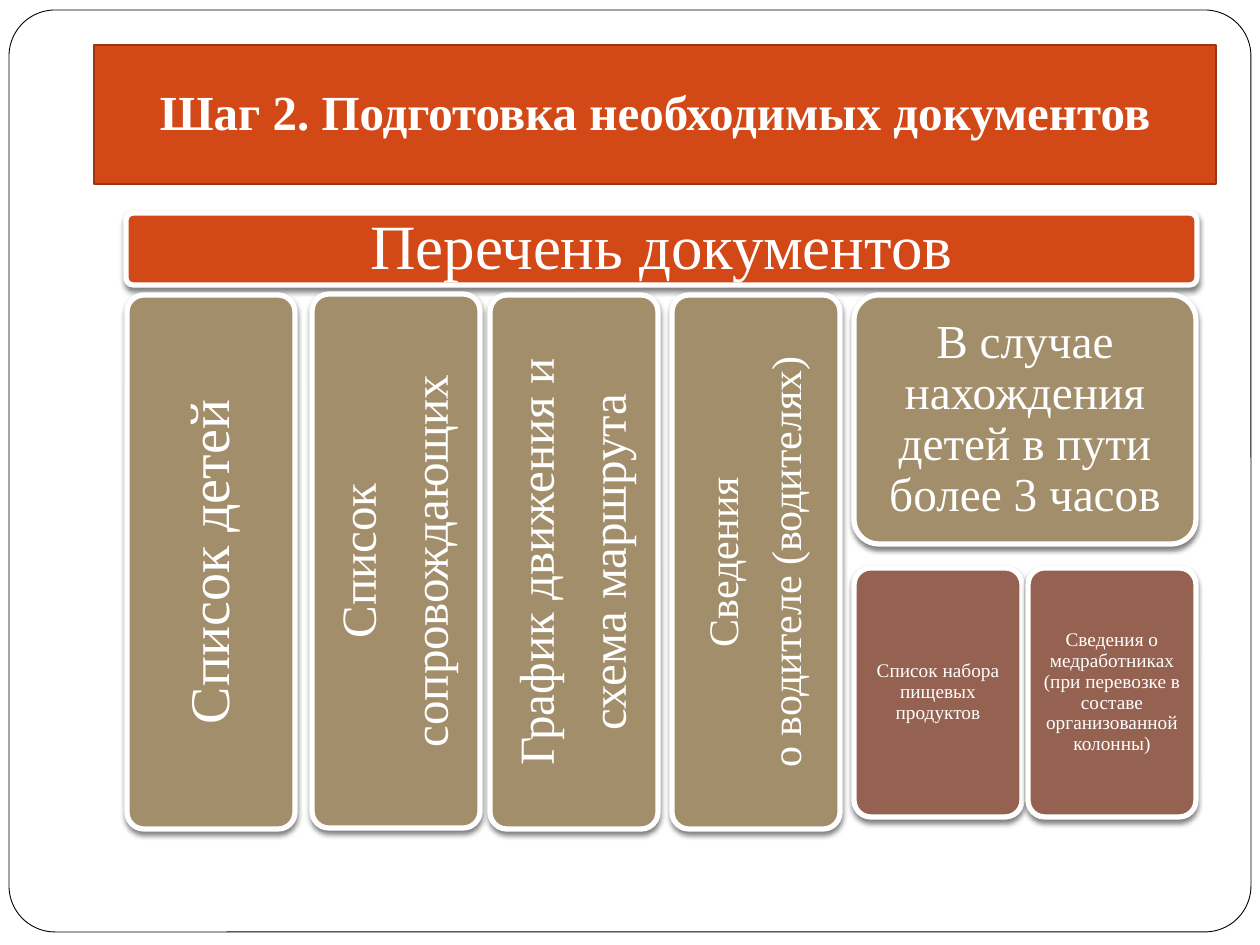
from lxml import etree
from pptx import Presentation
from pptx import util as u
from pptx.dml.color import RGBColor
from pptx.enum import shapes, text
from pptx.oxml.ns import qn

PX = 914400 / 126
FONT = "Times New Roman"
C = {"white": "FFFFFF", "black": "000000", "orange": "D34817",
     "rust": "9C3511", "sand": "A28E6A", "brown": "956251"}
COLUMNS = [  # left, top, size, inset, lines
    (0, 0, 32, 16, ["Список детей"]),
    (185, -1, 28, 15, ["Список", "сопровождающих"]),
    (363, 0, 28, 15, ["График движения и", "схема маршрута"]),
    (545, 0, 24, 13, ["Сведения", "о водителе (водителях)"]),
]
TRIP = "В случае нахождения детей в пути более 3 часов"
TRIP_DOCS = ["Список набора пищевых продуктов",
             "Сведения о медработниках (при перевозке в составе "
             "организованной колонны)"]


def px(n):
    return u.Emu(round(n * PX))


def rgb(name):
    return RGBColor.from_string(C[name])


def box(s, at, fill, line, width, adj=None):
    kind = shapes.MSO_SHAPE.RECTANGLE if adj is None else shapes.MSO_SHAPE.ROUNDED_RECTANGLE
    sp = s.shapes.add_shape(kind, *map(px, at))
    if adj is not None:
        sp.adjustments[0] = adj
    sp.fill.solid()
    sp.fill.fore_color.rgb = rgb(fill)
    sp.line.color.rgb = rgb(line)
    sp.line.width = u.Pt(width)
    sp.shadow.inherit = False
    return sp


def write(sp, lines, size, insets, para, bold=False):
    tf = sp.text_frame
    left, top, right, bottom = map(px, insets)
    frame = {"word_wrap": True, "vertical_anchor": text.MSO_ANCHOR.MIDDLE,
             "margin_left": left, "margin_top": top,
             "margin_right": right, "margin_bottom": bottom}
    for key, value in frame.items():
        setattr(tf, key, value)
    for i, line in enumerate(lines):
        p = tf.paragraphs[0] if i == 0 else tf.add_paragraph()
        for key, value in {"alignment": text.PP_ALIGN.CENTER, **para}.items():
            setattr(p, key, value)
        r = p.add_run()
        r.text = line
        for key, value in {"name": FONT, "size": u.Pt(size), "bold": bold}.items():
            setattr(r.font, key, value)
        r.font.color.rgb = rgb("white")


def add_shadow(sp):
    effects = sp._element.spPr.find(qn("a:effectLst"))
    shadow = etree.SubElement(effects, qn("a:outerShdw"), blurRad=str(u.Pt(3)),
                              dist=str(u.Pt(2)), dir="5400000", rotWithShape="0")
    color = etree.SubElement(shadow, qn("a:srgbClr"), val=C["black"])
    etree.SubElement(color, qn("a:alpha"), val="50000")


def card(s, at, fill, lines, size, inset, vertical=False):
    sp = box(s, at, fill, "white", 3, 0.1)
    add_shadow(sp)
    para = {"line_spacing": 0.9, "space_after": u.Pt(round(size * 0.4))}
    write(sp, lines, size, [inset] * 4, para)
    if vertical:
        sp.text_frame._txBody.bodyPr.set("vert", "vert270")


def title(s, at):
    sp = box(s, at, "orange", "rust", 1)
    write(sp, ["Шаг 2. Подготовка необходимых документов"], 28, (13, 6, 13, 13), {}, True)


def document_columns(s, x, y, w, h):
    for dx, dy, size, inset, lines in COLUMNS:
        card(s, (x + dx, y + dy, w, h), "sand", lines, size, inset, True)


def trip_block(s, x, y, w, h):
    card_h, card_w = 249, 168
    card(s, (x, y, w, card_h), "sand", [TRIP], 27, 14)
    for i, line in enumerate(TRIP_DOCS):
        left = x + i * (w - card_w)
        card(s, (left, y + h - card_h, card_w, card_h), "brown", [line], 11, 6)


def main():
    prs = Presentation()
    prs.slide_width, prs.slide_height = u.Inches(10), u.Inches(7.5)
    s = prs.slides.add_slide(prs.slide_layouts[6])
    # Page frame and title
    box(s, (9, 10, 1242, 922), "white", "black", 0.5, 0.05)
    title(s, (94, 45, 1122, 139))
    # List of documents
    card(s, (126, 213, 1071, 72), "orange", ["Перечень документов"], 36, 19)
    document_columns(s, 127, 295, 168, 534)
    # Extra documents for long trips
    trip_block(s, 854, 295, 342, 522)
    prs.save("out.pptx")


if __name__ == "__main__":
    main()
